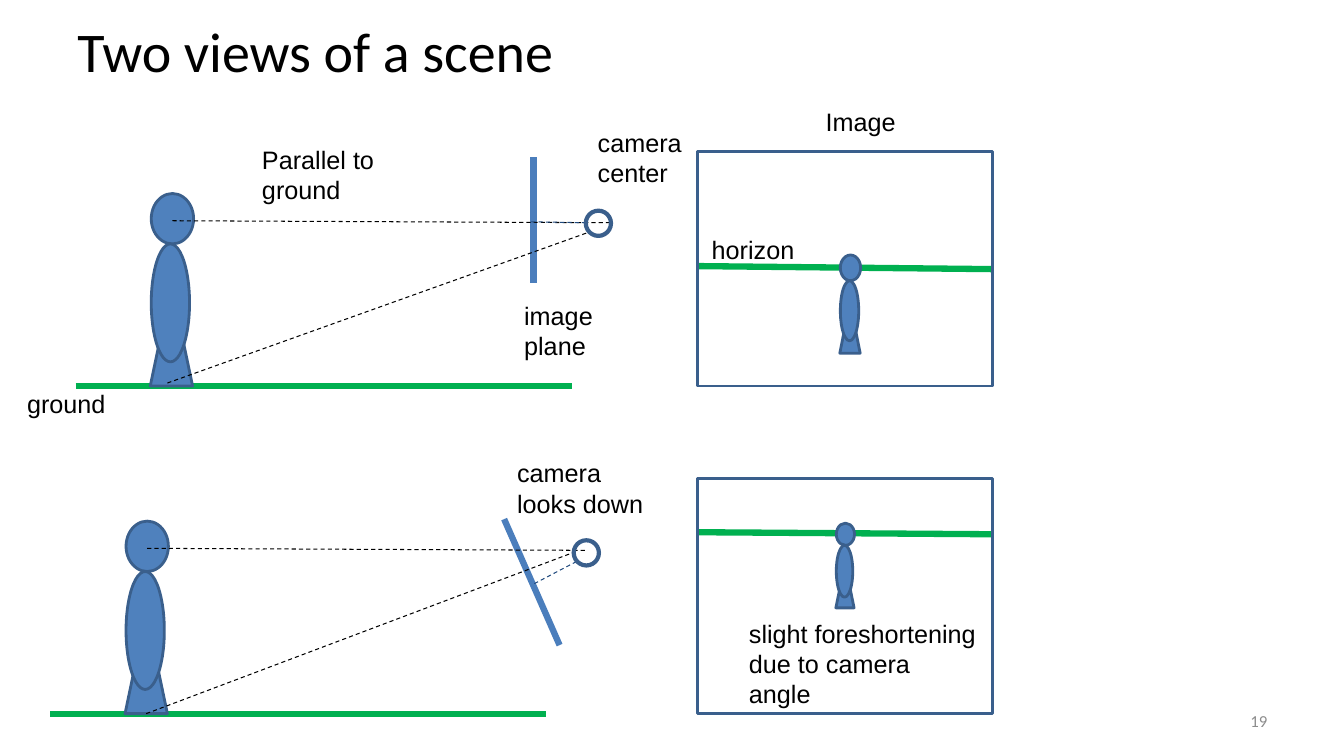
"""Build the slide that compares two camera views of a standing person."""
from dataclasses import dataclass
from typing import Any, Optional

from lxml.etree import SubElement
from pptx import Presentation
from pptx.dml.color import RGBColor
from pptx.enum.dml import MSO_LINE
from pptx.enum.shapes import MSO_CONNECTOR, MSO_SHAPE
from pptx.enum.text import MSO_ANCHOR, MSO_AUTO_SIZE as AutoSize, PP_ALIGN
from pptx.oxml.ns import qn
from pptx.slide import Slide
from pptx.util import Inches, Pt

BLACK = RGBColor(0x00, 0x00, 0x00)
GREY = RGBColor(0x8C, 0x8C, 0x8C)
GREEN = RGBColor(0x00, 0xB0, 0x50)
BLUE = RGBColor(0x4F, 0x81, 0xBD)
OUTLINE = RGBColor(0x3A, 0x5F, 0x8C)
PLANE = RGBColor(0x4B, 0x7E, 0xBC)
NAVY = RGBColor(0x1F, 0x49, 0x7D)

THICK = {"width": Pt(4.5)}
DASHED = {"width": Pt(0.75), "dash_style": MSO_LINE.DASH}


@dataclass(frozen=True)
class Segment:
    x1: float
    y1: float
    x2: float
    y2: float
    color: RGBColor
    style: dict[str, Any]


@dataclass(frozen=True)
class Outline:
    kind: MSO_SHAPE
    left: float
    top: float
    width: float
    height: float
    weight: float = 2
    fill: Optional[RGBColor] = None


@dataclass(frozen=True)
class Person:
    left: float
    top: float
    x_scale: float = 1
    y_scale: float = 1


@dataclass(frozen=True)
class Label:
    text: str
    left: float
    top: float
    width: float
    height: float
    wrap: bool = True
    font: str = "Arial"
    size: float = 18
    color: RGBColor = BLACK
    align: PP_ALIGN = PP_ALIGN.LEFT
    anchor: MSO_ANCHOR = MSO_ANCHOR.TOP
    fit: AutoSize = AutoSize.SHAPE_TO_FIT_TEXT


BODY_PARTS = [
    Outline(MSO_SHAPE.OVAL, 0.01, 0, 0.42, 0.5),
    Outline(MSO_SHAPE.ISOSCELES_TRIANGLE, 0, 0.91, 0.42, 1),
    Outline(MSO_SHAPE.OVAL, 0.01, 0.5, 0.38, 1.17),
]

SCENERY = [
    Segment(0.75, 3.83, 5.67, 3.83, GREEN, THICK),
    Segment(0.5, 7.08, 5.42, 7.08, GREEN, THICK),
    Segment(5.29, 1.56, 5.29, 2.81, PLANE, THICK),
    Segment(5, 5.15, 5.55, 6.4, PLANE, THICK),
    Segment(6.92, 2.64, 9.83, 2.67, GREEN, THICK),
    Segment(6.92, 5.28, 9.83, 5.3, GREEN, THICK),
]

PEOPLE = [
    Person(1.49, 1.92),
    Person(1.24, 5.17),
    Person(8.33, 2.53, 0.48, 0.51),
    Person(8.29, 5.19, 0.43, 0.44),
]

RAYS = [
    Segment(1.71, 2.19, 6.08, 2.21, BLACK, DASHED),
    Segment(1.66, 3.8, 5.85, 2.3, BLACK, DASHED),
    Segment(5.27, 2.2, 5.81, 2.21, NAVY, DASHED),
    Segment(1.46, 5.44, 5.83, 5.46, BLACK, DASHED),
    Segment(1.45, 7.08, 5.69, 5.48, BLACK, DASHED),
    Segment(5.3, 5.79, 5.72, 5.57, NAVY, DASHED),
]

FRAMES_AND_CAMERAS = [
    Outline(MSO_SHAPE.RECTANGLE, 6.92, 1.5, 2.92, 2.33),
    Outline(MSO_SHAPE.RECTANGLE, 6.92, 4.75, 2.92, 2.33),
    Outline(MSO_SHAPE.OVAL, 5.81, 2.09, 0.25, 0.25, 3),
    Outline(MSO_SHAPE.OVAL, 5.69, 5.36, 0.25, 0.25, 3),
]

LABELS = [
    Label("Two views of a scene", 0.67, 0, 12, 1, font="Calibri", size=40,
          anchor=MSO_ANCHOR.MIDDLE, fit=AutoSize.NONE),
    Label("ground", 0.17, 3.8, 0.99, 0.4, wrap=False),
    Label("image plane", 5.1, 2.93, 0.99, 0.71),
    Label("camera center", 5.83, 1.21, 1.25, 0.71),
    Label("Parallel to ground", 2.5, 1.38, 1.58, 0.71),
    Label("camera looks down", 5.03, 4.49, 1.45, 0.71),
    Label("Image", 8.09, 1.01, 0.9, 0.4, wrap=False),
    Label("horizon", 6.96, 2.28, 1.25, 0.4),
    Label("slight foreshortening due to camera angle", 7.33, 6.08, 2.46, 1.01),
    Label("19", 9.56, 6.95, 3.11, 0.4, font="Calibri", size=12, color=GREY,
          align=PP_ALIGN.RIGHT, anchor=MSO_ANCHOR.MIDDLE, fit=AutoSize.NONE),
]


def apply_format(target: Any, values: dict[str, Any]) -> None:
    for name, value in values.items():
        setattr(target, name, value)


def draw_segment(slide: Slide, segment: Segment) -> None:
    ends = map(Inches, (segment.x1, segment.y1, segment.x2, segment.y2))
    connector = slide.shapes.add_connector(MSO_CONNECTOR.STRAIGHT, *ends)
    connector.line.color.rgb = segment.color
    apply_format(connector.line, segment.style)
    SubElement(connector._element.spPr, qn("a:effectLst"))


def draw_outline(slide: Slide, outline: Outline) -> None:
    box = map(Inches, (outline.left, outline.top, outline.width, outline.height))
    shape = slide.shapes.add_shape(outline.kind, *box)
    shape.shadow.inherit = False
    if outline.fill is None:
        shape.fill.background()
    else:
        shape.fill.solid()
        shape.fill.fore_color.rgb = outline.fill
    shape.line.color.rgb = OUTLINE
    shape.line.width = Pt(outline.weight)


def draw_person(slide: Slide, person: Person) -> None:
    for part in BODY_PARTS:
        draw_outline(slide, Outline(
            part.kind,
            person.left + part.left * person.x_scale,
            person.top + part.top * person.y_scale,
            part.width * person.x_scale,
            part.height * person.y_scale,
            fill=BLUE,
        ))


def draw_label(slide: Slide, label: Label) -> None:
    box = map(Inches, (label.left, label.top, label.width, label.height))
    frame = slide.shapes.add_textbox(*box).text_frame
    apply_format(frame, {"text": label.text, "word_wrap": label.wrap,
                         "auto_size": label.fit, "vertical_anchor": label.anchor})
    paragraph = frame.paragraphs[0]
    paragraph.alignment = label.align
    font = paragraph.runs[0].font
    apply_format(font, {"name": label.font, "size": Pt(label.size)})
    font.color.rgb = label.color


def main() -> None:
    deck = Presentation()
    apply_format(deck, {"slide_width": Inches(13.33), "slide_height": Inches(7.5)})
    slide = deck.slides.add_slide(deck.slide_layouts[6])
    for draw, items in (
        (draw_segment, SCENERY),
        (draw_person, PEOPLE),
        (draw_segment, RAYS),
        (draw_outline, FRAMES_AND_CAMERAS),
        (draw_label, LABELS),
    ):
        for item in items:
            draw(slide, item)
    deck.save("out.pptx")


if __name__ == "__main__":
    main()
